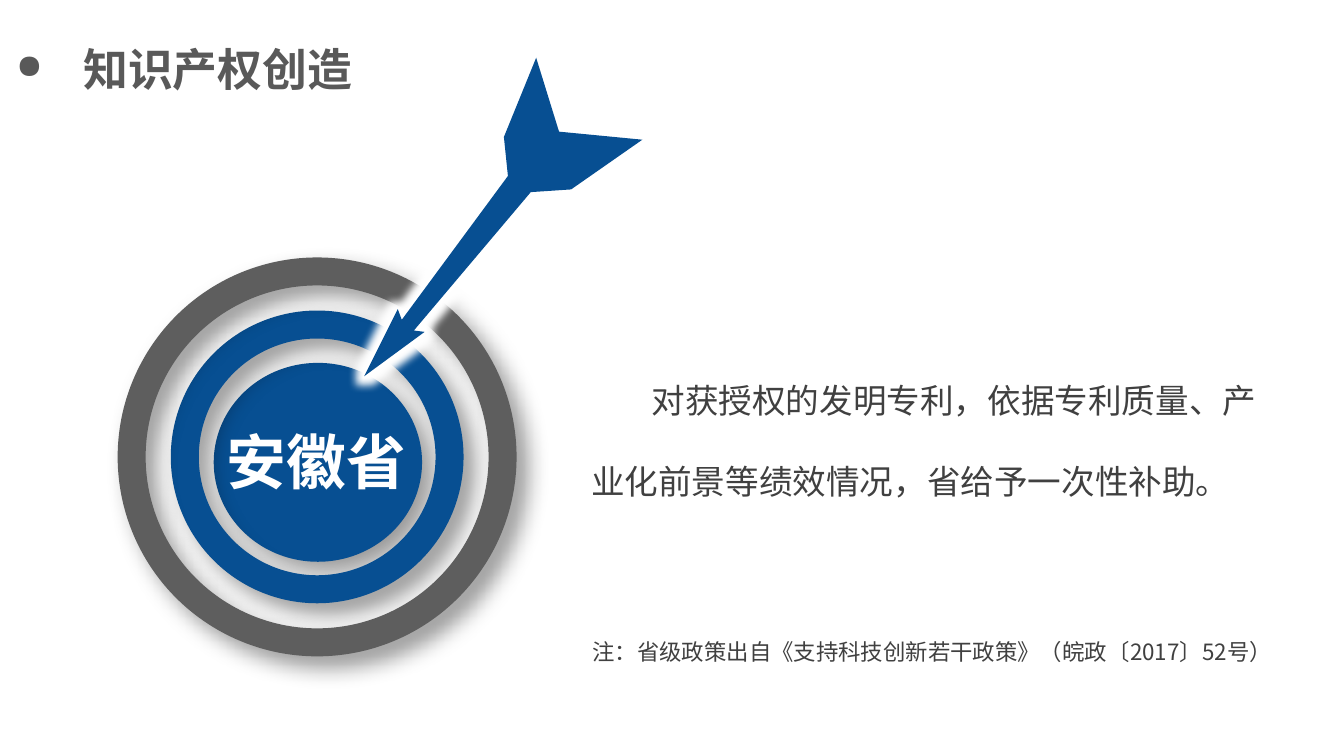
from lxml.etree import SubElement
from pptx import Presentation
from pptx.dml.color import RGBColor
from pptx.enum.shapes import MSO_SHAPE
from pptx.enum.text import MSO_ANCHOR
from pptx.oxml.ns import qn
from pptx.util import Inches, Pt

THEME = {
    "font": "Noto Sans CJK SC",
    "blue": "074F92", "gray": "5E5E5E", "title": "595959",
    "body": "404040", "white": "FFFFFF", "shadow": "000000",
    "title_pt": 24, "body_pt": 18, "label_pt": 32, "note_pt": 12,
    "ring_pt": 15, "glow_pt": 9, "bullet_pct": 75,
}

TEXTS = [
    ("知识产权创造", (0.12, 0.3, 2.97, 0.42),
     {"size": "title_pt", "color": "title", "bold": True, "bullet": "●",
      "margin": 0.5, "indent": -0.5, "inset": 0, "anchor": MSO_ANCHOR.MIDDLE}),
    ("对获授权的发明专利，依据专利质量、产业化前景等绩效情况，省给予一次性补助。",
     (4.3, 2.48, 5.34, 1.31),
     {"size": "body_pt", "color": "body", "spacing": 2, "indent": 0.45}),
    ("安徽省", (1.59, 3.11, 1.86, 0.64),
     {"size": "label_pt", "color": "white", "bold": True}),
    ("注：省级政策出自《支持科技创新若干政策》（皖政〔2017〕52号）",
     (4.31, 4.7, 5.33, 0.3), {"size": "note_pt", "color": "body"}),
]

DISC = (1.59, 2.7, 1.55, 1.48)
RING_CENTER = (2.36, 3.4)
RINGS = [(1.97, "blue"), (2.76, "gray")]
DART = [(2.71, 2.8), (3.16, 2.47), (3.08, 2.46), (3.95, 1.43), (4.25, 1.41),
        (4.78, 1.04), (4.16, 0.98), (3.99, 0.43), (3.75, 1.02), (3.78, 1.31),
        (2.99, 2.38), (2.96, 2.3)]


def rgb(name):
    return RGBColor.from_string(THEME[name])


def add_effect(sp, tag, color, alpha, **attrs):
    sp.shadow.inherit = False
    effects = sp._element.spPr.find(qn("a:effectLst"))
    effect = SubElement(effects, qn(tag), {k: str(v) for k, v in attrs.items()})
    clr = SubElement(effect, qn("a:srgbClr"), val=THEME[color])
    SubElement(clr, qn("a:alpha"), val=str(alpha * 1000))


def add_circle(s, box, fill=None, line=None):
    sp = s.shapes.add_shape(MSO_SHAPE.OVAL, *map(Inches, box))
    if fill:
        sp.fill.solid()
        sp.fill.fore_color.rgb = rgb(fill)
    else:
        sp.fill.background()
    if line:
        sp.line.color.rgb = rgb(line)
        sp.line.width = Pt(THEME["ring_pt"])
    else:
        sp.line.fill.background()
    add_effect(sp, "a:outerShdw", "shadow", 40, blurRad=Pt(12), dist=Pt(8),
               dir=45 * 60000, algn="tl", rotWithShape=0)


def add_dart(s):
    start, *rest = [(round(x * 100), round(y * 100)) for x, y in DART]
    builder = s.shapes.build_freeform(*start, scale=Inches(0.01))
    builder.add_line_segments(rest, close=True)
    sp = builder.convert_to_shape()
    sp.fill.solid()
    sp.fill.fore_color.rgb = rgb("blue")
    sp.line.fill.background()
    add_effect(sp, "a:glow", "white", 100, rad=Pt(THEME["glow_pt"]))


def add_text(s, text, box, *, size, color, bold=False, bullet=None, margin=0,
             indent=0, spacing=None, inset=0.1, anchor=MSO_ANCHOR.TOP):
    tf = s.shapes.add_textbox(*map(Inches, box)).text_frame
    tf.word_wrap = True
    tf.vertical_anchor = anchor
    tf.margin_left = tf.margin_right = Inches(inset)
    p = tf.paragraphs[0]
    pPr = p._p.get_or_add_pPr()
    pPr.set("marL", str(Inches(margin)))
    pPr.set("indent", str(Inches(indent)))
    if bullet:
        SubElement(pPr, qn("a:buSzPct"), val=str(THEME["bullet_pct"] * 1000))
        SubElement(pPr, qn("a:buChar"), char=bullet)
    if spacing:
        p.line_spacing = spacing
    r = p.add_run()
    r.text = text
    r.font.name = THEME["font"]
    r.font.size = Pt(THEME[size])
    r.font.bold = bold
    r.font.color.rgb = rgb(color)
    SubElement(r._r.get_or_add_rPr(), qn("a:ea"), typeface=THEME["font"])


def main():
    """Build the target-and-dart slide on provincial patent subsidies."""
    prs = Presentation()
    prs.slide_width = Inches(10)
    prs.slide_height = prs.slide_width * 9 // 16
    s = prs.slides.add_slide(prs.slide_layouts[6])
    add_circle(s, DISC, fill="blue")
    cx, cy = RING_CENTER
    for d, color in RINGS:
        add_circle(s, (cx - d / 2, cy - d / 2, d, d), line=color)
    add_dart(s)
    for text, box, fmt in TEXTS:
        add_text(s, text, box, **fmt)
    prs.save("out.pptx")


if __name__ == "__main__":
    main()
